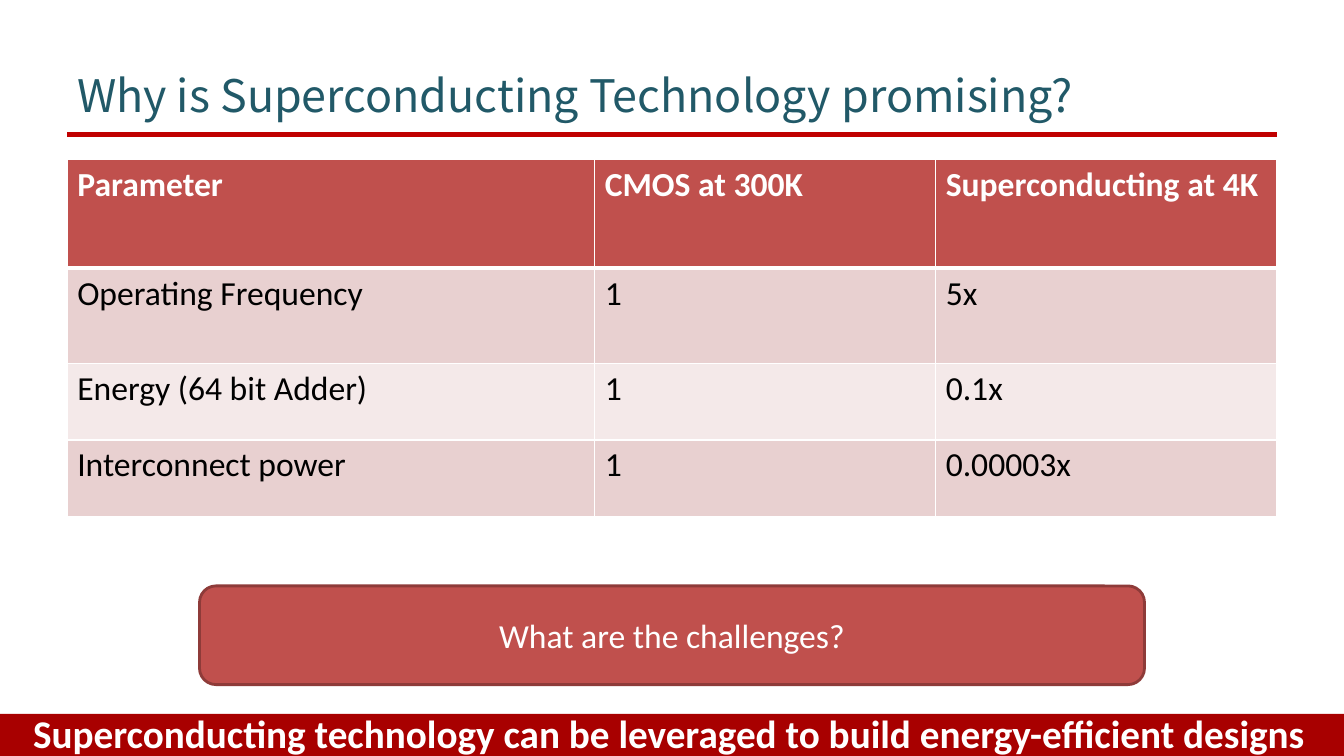
from lxml import etree
from pptx import Presentation
from pptx.dml.color import RGBColor
from pptx.enum.shapes import MSO_CONNECTOR, MSO_SHAPE
from pptx.enum.text import MSO_ANCHOR, PP_ALIGN
from pptx.oxml.ns import qn
from pptx.util import Pt

RECTANGLE, ROUNDED = MSO_SHAPE.RECTANGLE, MSO_SHAPE.ROUNDED_RECTANGLE
STRAIGHT = MSO_CONNECTOR.STRAIGHT
TOP, MIDDLE, BOTTOM = MSO_ANCHOR.TOP, MSO_ANCHOR.MIDDLE, MSO_ANCHOR.BOTTOM
LEFT, CENTER = PP_ALIGN.LEFT, PP_ALIGN.CENTER

TITLE = "Why is Superconducting Technology promising?"
QUESTION = "What are the challenges?"
TAKEAWAY = "Superconducting technology can be leveraged to build energy-efficient designs"
ROWS = [
    ("Parameter", "CMOS at 300K", "Superconducting at 4K"),
    ("Operating Frequency", "1", "5x"),
    ("Energy (64 bit Adder)", "1", "0.1x"),
    ("Interconnect power", "1", "0.00003x"),
]
COLUMN_WIDTHS = [376.8, 243.6, 243.6]
ROW_HEIGHTS = [77.5, 68, 54.75, 54.75]
WIDTH, HEIGHT, MARGIN = 960, 540, 48
CONTENT_WIDTH = WIDTH - 2 * MARGIN
RED, WHITE, BLACK = "C0504D", "FFFFFF", "000000"
BANDS = ["E8D0D0", "F4E9E9"]


def color(value):
    return RGBColor.from_string(value)


def write(frame, text, size=24, font="Calibri", ink=WHITE, bold=False,
          align=LEFT, anchor=TOP):
    frame.word_wrap = True
    frame.vertical_anchor = anchor
    para = frame.paragraphs[0]
    para.alignment = align
    span = para.add_run()
    span.text = text
    span.font.size = Pt(size)
    span.font.name = font
    span.font.bold = bold
    span.font.color.rgb = color(ink)


def add_block(page, kind, left, top, width, height, fill, outline=None):
    block = page.shapes.add_shape(kind, Pt(left), Pt(top), Pt(width), Pt(height))
    block.shadow.inherit = False
    block.fill.solid()
    block.fill.fore_color.rgb = color(fill)
    if outline:
        block.line.color.rgb = color(outline)
        block.line.width = Pt(2)
    else:
        block.line.fill.background()
    return block


def add_text_box(page, left, top, width, height, text, **style):
    box = page.shapes.add_textbox(Pt(left), Pt(top), Pt(width), Pt(height))
    write(box.text_frame, text, **style)


def add_rule(page, top):
    rule = page.shapes.add_connector(
        STRAIGHT, Pt(MARGIN), Pt(top), Pt(WIDTH - MARGIN), Pt(top))
    rule.line.color.rgb = color("C00000")
    rule.line.width = Pt(4)
    etree.SubElement(rule._element.spPr, qn("a:effectLst"))


def set_borders(cell, row):
    properties = cell._tc.get_or_add_tcPr()
    widths = {"L": 1, "R": 1, "T": 3 if row == 1 else 1, "B": 3 if row == 0 else 1}
    for side, width in widths.items():
        edge = etree.SubElement(properties, qn("a:ln" + side), w=str(Pt(width)))
        fill = etree.SubElement(edge, qn("a:solidFill"))
        etree.SubElement(fill, qn("a:srgbClr"), val=WHITE)


def add_comparison(page, top):
    table = page.shapes.add_table(
        len(ROWS), len(COLUMN_WIDTHS), Pt(MARGIN), Pt(top),
        Pt(CONTENT_WIDTH), Pt(sum(ROW_HEIGHTS))).table
    for column, width in zip(table.columns, COLUMN_WIDTHS):
        column.width = Pt(width)
    for row, values in enumerate(ROWS):
        table.rows[row].height = Pt(ROW_HEIGHTS[row])
        header = row == 0
        for column, value in enumerate(values):
            cell = table.cell(row, column)
            set_borders(cell, row)
            cell.fill.solid()
            cell.fill.fore_color.rgb = color(RED if header else BANDS[(row - 1) % 2])
            write(cell.text_frame, value, ink=WHITE if header else BLACK, bold=header)


def main():
    deck = Presentation()
    deck.slide_width, deck.slide_height = Pt(WIDTH), Pt(HEIGHT)
    page = deck.slides.add_slide(deck.slide_layouts[6])
    add_block(page, RECTANGLE, 0, 510, WIDTH, 30, "A80000")
    add_rule(page, 96)
    add_text_box(page, MARGIN, 36, CONTENT_WIDTH, 54, TITLE, size=32,
                 font="Noto Sans CJK KR", ink="215968", anchor=BOTTOM)
    question = add_block(page, ROUNDED, 142.5, 418.5, 675, 70.5, RED, outline="8E3B39")
    write(question.text_frame, QUESTION, align=CENTER, anchor=MIDDLE)
    add_comparison(page, 114)
    add_text_box(page, -2.5, 502, WIDTH, 43, TAKEAWAY, size=28, bold=True,
                 align=CENTER, anchor=MIDDLE)
    deck.save("out.pptx")


if __name__ == "__main__":
    main()
